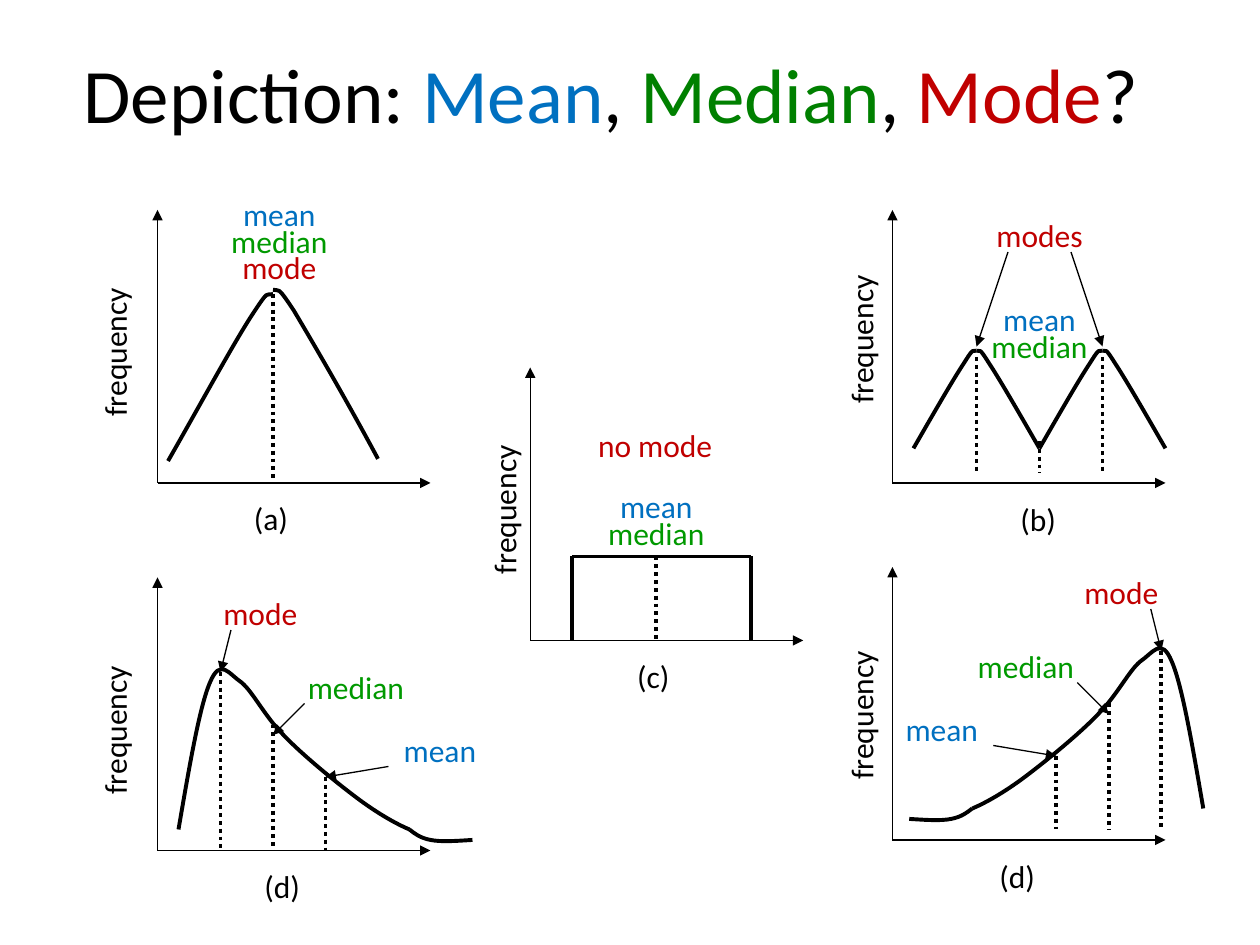
import pptx
import pptx.util
from pptx.dml.color import RGBColor
from pptx.enum.dml import MSO_LINE
from pptx.enum.shapes import MSO_CONNECTOR
from pptx.enum.text import MSO_ANCHOR, MSO_AUTO_SIZE, PP_ALIGN
from pptx.oxml.ns import qn
from lxml import etree

PX = 7620  # EMU, 120 px to the inch
AXIS = 260


class Theme:
    font = "Calibri"
    title, body = 44, 18
    thin, thick = 0.75, 2.25
    ink, blue, green, leaf, red = "000000", "0070C0", "008000", "009900", "C00000"


WORD_COLOR = {"mean": Theme.blue, "median": Theme.leaf}
WORD_WIDTH = {"mean": 94, "median": 121, "mode": 96, "modes": 107, "no mode": 134}


def assign(obj, values):
    for name, value in values.items():
        setattr(obj, name, value)


def bend(sp):
    """Turn every three straight segments of a freeform into one cubic Bezier."""
    segments = list(sp._element.iter(qn("a:lnTo")))
    for i in range(0, len(segments), 3):
        first, *others = segments[i:i + 3]
        cubic = etree.Element(qn("a:cubicBezTo"))
        first.addprevious(cubic)
        for segment in (first, *others):
            cubic.append(segment[0])
            segment.getparent().remove(segment)


def mirror(points, total, dy=0):
    """Reflect points left to right so that old x + new x = total."""
    return [(total - x, y + dy) for x, y in points]


class Sketch:
    def __init__(self, slide, theme):
        self.s, self.theme = slide, theme

    def runs(self, p, parts, size):
        for text, color in parts:
            r = p.add_run()
            r.text = text
            assign(r.font, {"name": self.theme.font, "size": pptx.util.Pt(size)})
            r.font.color.rgb = RGBColor.from_string(color)

    def title(self, box, parts):
        sp = self.s.shapes.title
        assign(sp, dict(zip(("left", "top", "width", "height"), (v * PX for v in box))))
        assign(sp.text_frame, {"vertical_anchor": MSO_ANCHOR.MIDDLE, "word_wrap": True})
        p = sp.text_frame.paragraphs[0]
        p.alignment = PP_ALIGN.CENTER
        self.runs(p, parts, self.theme.title)

    def text(self, cx, top, w, h, lines, rotation=0, **para):
        sp = self.s.shapes.add_textbox(int((cx - w / 2) * PX), top * PX, w * PX, h * PX)
        sp.rotation = rotation
        tf = sp.text_frame
        assign(tf, {"word_wrap": False, "auto_size": MSO_AUTO_SIZE.SHAPE_TO_FIT_TEXT})
        for i, line in enumerate(lines):
            p = tf.add_paragraph() if i else tf.paragraphs[0]
            assign(p, para)
            self.runs(p, [line], self.theme.body)

    def label(self, cx, top, *words):
        """Stack coloured words tightly, centred on cx."""
        lines = [(w, WORD_COLOR.get(w, self.theme.red)) for w in words]
        self.text(cx, top, max(WORD_WIDTH[w] for w in words), 14 + 25 * len(words),
                  lines, alignment=PP_ALIGN.CENTER, line_spacing=0.7)

    def stroke(self, line, width, dash=None):
        line.color.rgb = RGBColor.from_string(self.theme.ink)
        assign(line, {"width": pptx.util.Pt(width), "dash_style": dash})

    def line(self, a, b, width=Theme.thick, dash=None, arrow=False):
        cn = self.s.shapes.add_connector(MSO_CONNECTOR.STRAIGHT, *(v * PX for v in (*a, *b)))
        self.stroke(cn.line, width, dash)
        if arrow:
            etree.SubElement(cn.line._get_or_add_ln(), qn("a:tailEnd"), type="triangle")
        etree.SubElement(cn._element.spPr, qn("a:effectLst"))

    def arrow(self, a, b):
        self.line(a, b, Theme.thin, arrow=True)

    def dotted(self, a, b):
        self.line(a, b, dash=MSO_LINE.ROUND_DOT)

    def curve(self, points):
        """Draw a chain of cubic Beziers: a start, then three points for each."""
        first, *rest = [(x * PX, y * PX) for x, y in points]
        fb = self.s.shapes.build_freeform(*first, scale=1.0)
        fb.add_line_segments(rest, close=False)
        sp = fb.convert_to_shape()
        bend(sp)
        sp.fill.background()
        sp.shadow.inherit = False
        self.stroke(sp.line, Theme.thick)

    def axes(self, origin, freq, caption, where):
        """Draw both axes, the turned label centred on freq, and the caption."""
        x, y = origin
        self.arrow(origin, (x, y - AXIS))
        self.arrow(origin, (x + AXIS, y))
        self.text(freq[0], freq[1] - 24, 149, 48, [("frequency", Theme.ink)], 270)
        self.text(*where, 58, 48, [(caption, Theme.ink)])


def normal(d):
    d.axes((150, 460), (109, 334), "(a)", (259, 469))
    d.curve([(160, 439), (192, 383), (223, 326), (240, 300), (257, 274), (253, 282), (260, 280)])
    d.curve([(360, 437), (329, 379), (296, 323), (280, 296), (263, 270), (266, 278), (260, 276)])
    d.dotted((260, 280), (260, 460))
    d.label(266, 190, "mean", "median", "mode")


def bimodal(d):
    d.axes((850, 460), (820, 322), "(b)", (989, 470))
    rise = [(870, 427), (889, 394), (908, 361), (918, 346), (928, 330), (926, 335), (930, 334)]
    for peak, tail in ((930, 960), (1050, 1020)):
        half = [(x + peak - 930, y) for x, y in rise]
        d.curve(half)
        d.curve(mirror(half, 2 * peak))
        d.dotted((peak, 340), (peak, 450))
        d.arrow((tail, 240), (peak, 330))
    d.dotted((990, 420), (990, 450))
    d.label(990, 290, "mean", "median")
    d.label(990, 210, "modes")


def uniform(d):
    d.axes((505, 610), (480, 484), "(c)", (624, 620))
    corners = [(545, 610), (545, 530), (715, 530), (715, 610)]
    for a, b in zip(corners, corners[1:]):
        d.line(a, b)
    d.dotted((625, 530), (625, 610))
    d.label(625, 468, "mean", "median")
    d.label(624, 410, "no mode")


def skewed(d, place):
    """Draw the right-skewed curve with its marks, each point moved by place."""
    hump = [(170, 790), (180, 732), (190, 673), (200, 650), (210, 626), (218, 642), (230, 650),
            (241, 659), (252, 682), (270, 700), (288, 719), (320, 745), (340, 760),
            (360, 775), (378, 785), (390, 790)]
    tail = [(390, 790), (395, 794), (400, 798), (410, 800), (420, 802), (434, 801), (450, 800)]
    for part in (hump, tail):
        d.curve(place(part))
    # word, label centre and top, arrow start, arrow tip, top of the dotted line
    marks = [("mode", (248, 570), (220, 600), (210, 640), 640),
             ("median", (339, 640), (290, 670), (260, 700), 690),
             ("mean", (419, 700), (370, 730), (310, 740), 740)]
    for word, spot, start, tip, top in marks:
        d.dotted(*place([(tip[0], top), (tip[0], 810)]))
        d.label(*place([spot])[0], word)
        d.arrow(*place([start, tip]))


def main():
    prs = pptx.Presentation()
    assign(prs, {"slide_width": 1200 * PX, "slide_height": 900 * PX})
    d = Sketch(prs.slides.add_slide(prs.slide_layouts[5]), Theme)
    d.title((50, 13, 1080, 150), [
        ("Depiction: ", Theme.ink), ("Mean", Theme.blue), (", ", Theme.ink),
        ("Median", Theme.green), (", ", Theme.ink), ("Mode", Theme.red), ("? ", Theme.ink)])
    normal(d)
    bimodal(d)
    uniform(d)
    d.axes((150, 810), (109, 694), "(d)", (269, 820))
    skewed(d, list)
    d.axes((850, 800), (820, 680), "(d)", (969, 810))
    skewed(d, lambda points: mirror(points, 1316, -20))
    prs.save("out.pptx")


if __name__ == "__main__":
    main()
